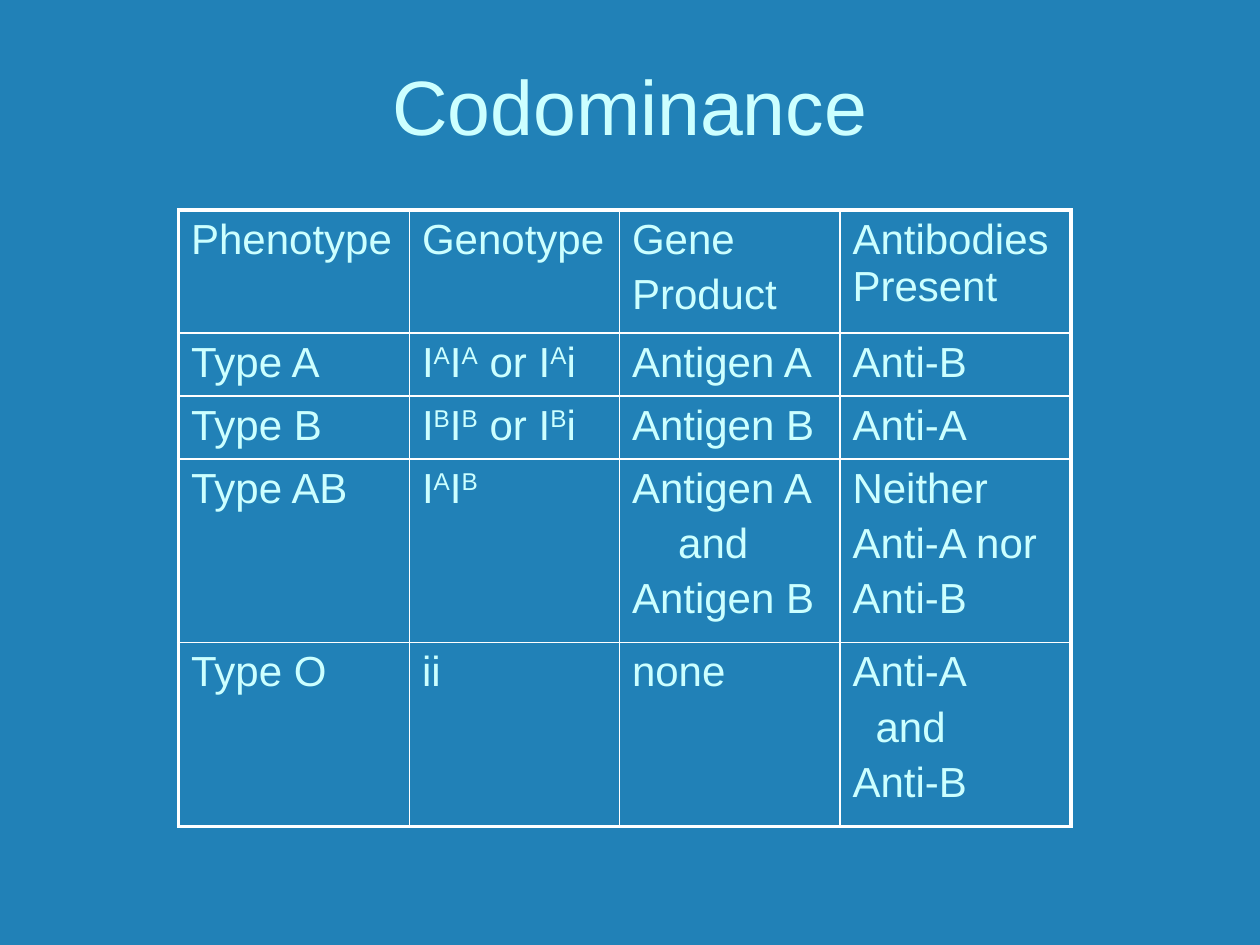
from dataclasses import dataclass

from lxml.etree import SubElement
from pptx import Presentation
from pptx.dml.color import RGBColor
from pptx.enum.text import MSO_ANCHOR, MSO_AUTO_SIZE, PP_ALIGN
from pptx.oxml.ns import qn
from pptx.util import Emu, Pt

EMU_PER_PX = 7620  # 120 px to the inch
BACKGROUND, TEXT, BORDER = "2181B7", "CCFFFF", "FFFFFF"
OUTER_WIDTH, INNER_WIDTH = 2.25, 1


@dataclass(frozen=True)
class Line:
    """One paragraph of a cell; ^ raises the letter after it."""
    text: str
    indent: int = 0


COLUMN_WIDTHS = (220, 200, 210, 220)
ROW_HEIGHTS = (117, 60, 60, 175, 175)
BLOOD_TYPES = (
    ("Phenotype", "Genotype", (Line("Gene"), Line("Product")), "Antibodies Present"),
    ("Type A", "I^AI^A or I^Ai", "Antigen A", "Anti-B"),
    ("Type B", "I^BI^B or I^Bi", "Antigen B", "Anti-A"),
    ("Type AB", "I^AI^B",
     (Line("Antigen A"), Line("and", indent=44), Line("Antigen B")),
     (Line("Neither"), Line("Anti-A nor"), Line("Anti-B"))),
    ("Type O", "ii", "none",
     (Line("Anti-A"), Line("and", indent=22), Line("Anti-B"))),
)


def px(length: int) -> Emu:
    return Emu(length * EMU_PER_PX)


def color(value: str) -> RGBColor:
    return RGBColor.from_string(value)


def add_text(paragraph, text: str, *, size: float = 24, fill: str = TEXT,
             font: str = "Arial", superscript: bool = False) -> None:
    run = paragraph.add_run()
    run.text = text
    run.font.name, run.font.size = font, Pt(size)
    run.font.color.rgb = color(fill)
    if superscript:
        run.font._element.set("baseline", "30000")


def write_line(paragraph, line: Line) -> None:
    if line.indent:
        paragraph._p.get_or_add_pPr().set("marL", str(px(line.indent)))
    plain, *raised_parts = line.text.split("^")
    add_text(paragraph, plain)
    for part in raised_parts:
        add_text(paragraph, part[0], superscript=True)
        if part[1:]:
            add_text(paragraph, part[1:])


def set_borders(cell, outer_sides: dict[str, bool]) -> None:
    properties = cell._tc.get_or_add_tcPr()
    for position, (side, is_outer) in enumerate(outer_sides.items()):
        width = OUTER_WIDTH if is_outer else INNER_WIDTH
        line = SubElement(properties, qn(f"a:ln{side}"), w=str(Pt(width)))
        fill = SubElement(line, qn("a:solidFill"))
        SubElement(fill, qn("a:srgbClr"), val=BORDER)
        properties.insert(position, line)  # borders come before the fill


def fill_cell(cell, content: str | tuple[Line, ...]) -> None:
    cell.fill.background()
    lines = (Line(content),) if isinstance(content, str) else content
    for index, line in enumerate(lines):
        frame = cell.text_frame
        paragraph = frame.add_paragraph() if index else frame.paragraphs[0]
        if index:
            paragraph.space_before = Pt(4.8)
        write_line(paragraph, line)


def add_title(slide, text: str) -> None:
    title = slide.shapes.title
    title.left, title.top, title.width, title.height = map(px, (100, 50, 1020, 100))
    frame = title.text_frame
    frame.auto_size = MSO_AUTO_SIZE.NONE
    frame.vertical_anchor = MSO_ANCHOR.BOTTOM
    paragraph = frame.paragraphs[0]
    paragraph.alignment = PP_ALIGN.CENTER
    add_text(paragraph, text, size=44)


def add_blood_type_table(slide) -> None:
    last_row, last_column = len(ROW_HEIGHTS) - 1, len(COLUMN_WIDTHS) - 1
    table = slide.shapes.add_table(
        len(ROW_HEIGHTS), len(COLUMN_WIDTHS), px(170), px(200),
        px(sum(COLUMN_WIDTHS)), px(sum(ROW_HEIGHTS))).table
    table.first_row = table.horz_banding = False
    for column, width in zip(table.columns, COLUMN_WIDTHS):
        column.width = px(width)
    for row, height in zip(table.rows, ROW_HEIGHTS):
        row.height = px(height)
    for i, contents in enumerate(BLOOD_TYPES):
        for j, content in enumerate(contents):
            cell = table.cell(i, j)
            fill_cell(cell, content)
            set_borders(cell, {"L": j == 0, "R": j == last_column,
                               "T": i == 0, "B": i == last_row})


def main() -> None:
    presentation = Presentation()
    presentation.slide_width, presentation.slide_height = px(1200), px(900)
    slide = presentation.slides.add_slide(presentation.slide_layouts[5])
    slide.background.fill.solid()
    slide.background.fill.fore_color.rgb = color(BACKGROUND)
    # Title and table
    add_title(slide, "Codominance ")
    add_blood_type_table(slide)
    presentation.save("out.pptx")


if __name__ == "__main__":
    main()
